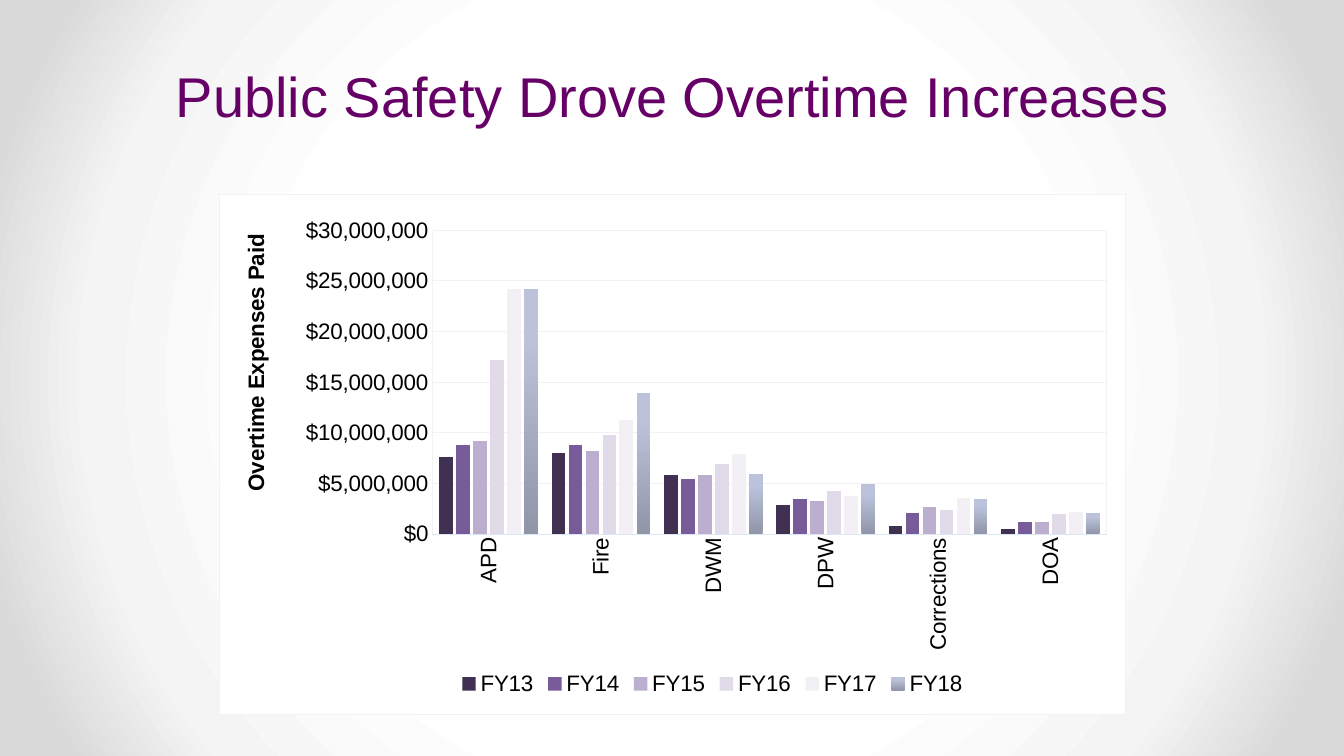
from pptx import Presentation
from pptx.chart.data import CategoryChartData
from pptx.dml.color import RGBColor
from pptx.enum.chart import (XL_CHART_TYPE as ChartType, XL_LEGEND_POSITION as LegendPosition,
                             XL_TICK_MARK as TickMark)
from pptx.enum.text import MSO_ANCHOR as Anchor, PP_ALIGN as Align
from pptx.oxml import parse_xml
from pptx.oxml.ns import nsdecls, qn
from pptx.util import Inches, Pt

FONT = "Arial"
PURPLE = RGBColor(0x66, 0x00, 0x66)
BLACK = RGBColor(0x00, 0x00, 0x00)
WHITE = RGBColor(0xFF, 0xFF, 0xFF)
PALE_GREY = RGBColor(0xF2, 0xF2, 0xF2)
PALE_BLUE = RGBColor(0xDB, 0xE5, 0xF4)
BACKDROP = [(50, WHITE), (76, RGBColor(0xF4, 0xF4, 0xF4)), (92, RGBColor(0xDA, 0xDA, 0xDA))]
STEEL = [(0, RGBColor(0x90, 0x95, 0xA8)), (80, RGBColor(0xBB, 0xC2, 0xDA)),
         (100, RGBColor(0xBC, 0xC2, 0xDC))]

DEPARTMENTS = ["APD", "Fire", "DWM", "DPW", "Corrections", "DOA"]
UNIT = 100_000
OVERTIME = {  # year: (values in UNIT dollars, solid colour or gradient stops)
    "FY13": ([76, 80, 58, 29, 8, 5], RGBColor(0x40, 0x31, 0x52)),
    "FY14": ([88, 88, 54, 35, 21, 12], RGBColor(0x78, 0x5C, 0x9A)),
    "FY15": ([92, 82, 58, 33, 27, 12], RGBColor(0xBC, 0xAE, 0xCE)),
    "FY16": ([172, 98, 69, 43, 24, 20], RGBColor(0xE1, 0xDB, 0xE9)),
    "FY17": ([242, 113, 79, 38, 36, 22], RGBColor(0xF2, 0xEF, 0xF5)),
    "FY18": ([242, 139, 59, 49, 35, 21], STEEL),
}


def set_gradient(fill, owner, stops, direction):
    """Give a fill the colour stops and a direction element."""
    fill.gradient()
    gradient = owner.find(".//" + qn("a:gradFill"))
    stop_xml = "".join(f'<a:gs pos="{pos * 1000}"><a:srgbClr val="{color}"/></a:gs>'
                       for pos, color in stops)
    gradient.getparent().replace(gradient, parse_xml(
        f'<a:gradFill {nsdecls("a")} rotWithShape="1"><a:gsLst>{stop_xml}</a:gsLst>'
        f'{direction}</a:gradFill>'))


def set_font(font, size, color, bold=False):
    font.name, font.size, font.bold = FONT, Pt(size), bold
    font.color.rgb = color


def set_line(line, color):
    line.color.rgb = color
    line.width = Pt(0.75)


def set_layout(parent, index, **values):
    """Place a chart part by fractions of the chart area."""
    for old in parent.findall(qn("c:layout")):
        parent.remove(old)
    target = '<c:layoutTarget val="inner"/>' if "w" in values else ""
    modes = "".join(f'<c:{key}Mode val="edge"/>' for key in values if key in "xy")
    sizes = "".join(f'<c:{key} val="{value}"/>' for key, value in values.items())
    parent.insert(index, parse_xml(
        f'<c:layout {nsdecls("c")}><c:manualLayout>{target}{modes}{sizes}'
        f'</c:manualLayout></c:layout>'))


def make_panel():
    """White area with a pale border."""
    return parse_xml(
        f'<c:spPr {nsdecls("c", "a")}><a:solidFill><a:srgbClr val="{WHITE}"/></a:solidFill>'
        f'<a:ln w="{Pt(0.75)}"><a:solidFill><a:srgbClr val="{PALE_GREY}"/></a:solidFill></a:ln>'
        f'</c:spPr>')


def add_title(page, left, top, width, height):
    box = page.shapes.add_textbox(left, top, width, height)
    frame = box.text_frame
    frame.word_wrap = True
    frame.vertical_anchor = Anchor.BOTTOM
    para = frame.paragraphs[0]
    para.alignment = Align.CENTER
    span = para.add_run()
    span.text = "Public Safety Drove Overtime Increases"
    set_font(span.font, 40, PURPLE)


def style_axes(chart):
    departments, dollars = chart.category_axis, chart.value_axis
    for axis in (departments, dollars):
        axis.major_tick_mark = axis.minor_tick_mark = TickMark.NONE
        set_font(axis.tick_labels.font, 16, BLACK)
    set_line(departments.format.line, PALE_BLUE)
    label_body = chart.element.find(f'.//{qn("c:catAx")}/{qn("c:txPr")}/{qn("a:bodyPr")}')
    label_body.set("rot", "-5400000")
    label_body.set("vert", "horz")

    dollars.minimum_scale, dollars.maximum_scale = 0, 30_000_000
    dollars.major_unit = 5_000_000
    dollars.tick_labels.number_format = '"$"#,##0'
    dollars.tick_labels.number_format_is_linked = False
    dollars.format.line.fill.background()
    set_line(dollars.major_gridlines.format.line, PALE_GREY)

    span = dollars.axis_title.text_frame.paragraphs[0].add_run()
    span.text = "Overtime Expenses Paid"
    set_font(span.font, 16, BLACK, bold=True)
    title = chart.element.find(f'.//{qn("c:valAx")}/{qn("c:title")}')
    title.find(".//" + qn("a:bodyPr")).set("rot", "-5400000")
    set_layout(title, 1, x=0.02, y=0.07)


def add_overtime_chart(page, left, top, width, height):
    data = CategoryChartData(number_format='"$"#,##0')
    data.categories = DEPARTMENTS
    for year, (amounts, _) in OVERTIME.items():
        data.add_series(year, [amount * UNIT for amount in amounts])
    chart = page.shapes.add_chart(ChartType.COLUMN_CLUSTERED, left, top, width, height, data).chart
    chart.has_title = False
    set_font(chart.font, 16, BLACK)

    # Columns
    plot = chart.plots[0]
    plot.gap_width, plot.overlap, plot.vary_by_categories = 100, -24, False
    for series, (_, color) in zip(plot.series, OVERTIME.values()):
        series.invert_if_negative = False
        fill = series.format.fill
        if color is STEEL:
            set_gradient(fill, chart.element, color, '<a:lin ang="16200000" scaled="0"/>')
        else:
            fill.solid()
            fill.fore_color.rgb = color

    style_axes(chart)

    # Legend
    chart.has_legend = True
    chart.legend.position = LegendPosition.BOTTOM
    chart.legend.include_in_layout = False
    set_font(chart.legend.font, 16, BLACK)
    set_layout(chart.element.find(".//" + qn("c:legend")), 1, x=0.26, y=0.91)

    # Chart and plot areas
    plot_area = chart.element.find(".//" + qn("c:plotArea"))
    set_layout(plot_area, 0, x=0.235, y=0.07, w=0.744, h=0.584)
    plot_area.append(make_panel())
    chart.element.find(qn("c:chart")).addnext(make_panel())


def build_overtime_page(deck):
    page = deck.slides.add_slide(deck.slide_layouts[6])
    set_gradient(page.background.fill, page.element, BACKDROP,
                 '<a:path path="circle"><a:fillToRect l="50000" t="50000" r="50000" b="50000"/>'
                 '</a:path>')
    add_title(page, 0, 0, deck.slide_width, Inches(1.33))
    add_overtime_chart(page, Inches(2.17), Inches(1.92), Inches(9), Inches(5.17))


def main():
    deck = Presentation()
    deck.slide_width, deck.slide_height = Inches(13.33), Inches(7.5)
    build_overtime_page(deck)
    deck.save("out.pptx")


if __name__ == "__main__":
    main()
